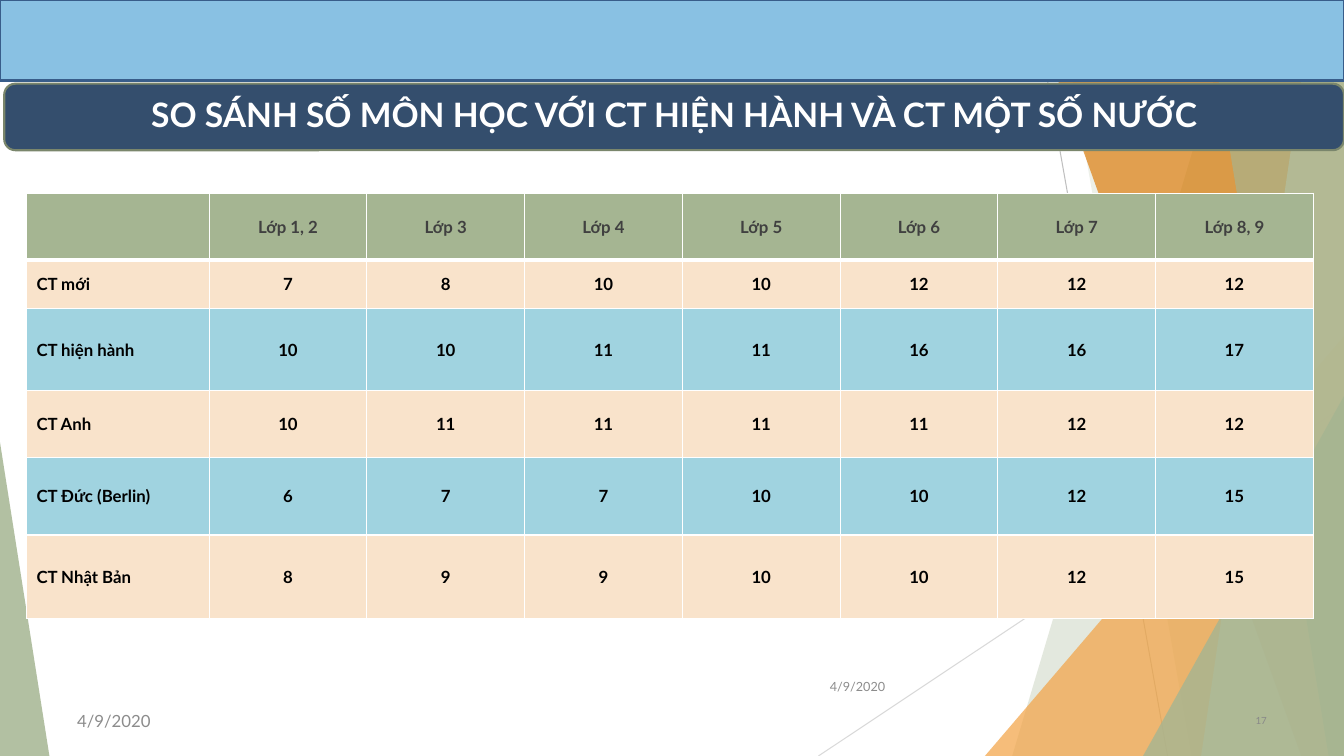
from dataclasses import dataclass
from typing import Any, Optional

import lxml.etree
import pptx
import pptx.dml.color
import pptx.enum.shapes
import pptx.enum.text
import pptx.oxml.ns
import pptx.slide
import pptx.util

Pt = pptx.util.Pt
Kind = pptx.enum.shapes.MSO_SHAPE
Align = pptx.enum.text.PP_ALIGN
Anchor = pptx.enum.text.MSO_ANCHOR
qn = pptx.oxml.ns.qn

WIDE, HIGH = 960, 540
WHITE, GREEN, PEACH, BLUE = "FFFFFF", "A5B592", "F9E3CB", "A0D3E0"
FONT = "Lato"


@dataclass
class Ray:
    start: tuple[float, float]
    end: tuple[float, float]
    color: str


@dataclass
class Band:
    top: float
    base: float
    color: str
    alpha: int


@dataclass
class Wedge:
    left: float
    top: float
    width: float
    peak: float
    color: str
    alpha: int


@dataclass
class Bar:
    kind: Any
    box: tuple[float, float, float, float]
    color: str
    edge: str
    weight: float
    text: str = ""


@dataclass
class Label:
    text: str
    box: tuple[float, float, float, float]
    size: float
    color: str
    align: Any


RAYS = [
    Ray((738, 0), (834, HIGH), "BFBFBF"),
    Ray((WIDE, 290), (584.6, HIGH), "D9D9D9"),
]
DECOR = [
    Band(884, 723, GREEN, 30),
    Band(756, 851, GREEN, 20),
    Wedge(703.5, 240, 256.5, 1, "F3A447", 72),
    Band(735, 929.5, "DD7E0E", 70),
    Band(938, 858, "C9D3BE", 70),
    Band(861, 949, GREEN, 65),
    Wedge(816.5, 283, 143.5, 1, GREEN, 80),
    Wedge(0, 316, 35.3, 0, GREEN, 85),
]
BARS = [
    Bar(Kind.RECTANGLE, (0, 0, WIDE, 57.3), "89C1E3", "385D8A", 2),
    Bar(Kind.ROUNDED_RECTANGLE, (3, 59.8, 957, 47.5), "344E6D", "7A866C", 1.5,
        "SO SÁNH SỐ MÔN HỌC VỚI CT HIỆN HÀNH VÀ CT MỘT SỐ NƯỚC"),
]
LABELS = [
    Label("4/9/2020", (567.3, 476, 72, 28.8), 9, "8C8C8C", Align.RIGHT),
    Label("4/9/2020", (48, 500.5, 224, 28.8), 12, "8C8C8C", Align.LEFT),
    Label("17", (688, 500.5, 224, 28.8), 7, "898989", Align.RIGHT),
]
ROWS = [
    ["", "Lớp 1, 2", "Lớp 3", "Lớp 4", "Lớp 5", "Lớp 6", "Lớp 7", "Lớp 8, 9"],
    ["CT mới", 7, 8, 10, 10, 12, 12, 12],
    ["CT hiện hành", 10, 10, 11, 11, 16, 16, 17],
    ["CT Anh", 10, 11, 11, 11, 11, 12, 12],
    ["CT Đức (Berlin)", 6, 7, 7, 10, 10, 12, 15],
    ["CT Nhật Bản", 8, 9, 9, 10, 10, 12, 15],
]
TALL = [47.5, 34.5, 59, 47.8, 55.2, 59.8]
FIRST, OTHER = 130.5, 112.7


def tint(code: str) -> pptx.dml.color.RGBColor:
    return pptx.dml.color.RGBColor.from_string(code)


def paint(shape: Any, color: str, alpha: int = 100) -> None:
    shape.shadow.inherit = False
    shape.fill.solid()
    shape.fill.fore_color.rgb = tint(color)
    shape.line.fill.background()
    if alpha < 100:
        mark = shape.element.spPr.find(f"{qn('a:solidFill')}/{qn('a:srgbClr')}")
        lxml.etree.SubElement(mark, qn("a:alpha"), val=str(alpha * 1000))


def write(frame: Any, text: str, size: float, color: str, align: Any,
          bold: bool = False) -> None:
    frame.text = text
    line = frame.paragraphs[0]
    line.alignment = align
    for run in line.runs:
        run.font.name = FONT
        run.font.size = Pt(size)
        run.font.bold = bold
        run.font.color.rgb = tint(color)


def draw_ray(slide: pptx.slide.Slide, ray: Ray) -> None:
    ends = [Pt(n) for n in ray.start + ray.end]
    line = slide.shapes.add_connector(pptx.enum.shapes.MSO_CONNECTOR.STRAIGHT, *ends)
    line.line.color.rgb = tint(ray.color)
    line.line.width = Pt(0.75)
    lxml.etree.SubElement(line.element.spPr, qn("a:effectLst"))


def draw_band(slide: pptx.slide.Slide, band: Band) -> None:
    pen = slide.shapes.build_freeform(Pt(band.top), 0)
    dots = [(WIDE, 0), (WIDE, HIGH), (band.base, HIGH)]
    pen.add_line_segments([(Pt(x), Pt(y)) for x, y in dots], close=True)
    paint(pen.convert_to_shape(), band.color, band.alpha)


def draw_wedge(slide: pptx.slide.Slide, wedge: Wedge) -> None:
    shape = slide.shapes.add_shape(
        Kind.ISOSCELES_TRIANGLE, Pt(wedge.left), Pt(wedge.top),
        Pt(wedge.width), Pt(HIGH - wedge.top))
    shape.adjustments[0] = wedge.peak
    paint(shape, wedge.color, wedge.alpha)


def draw_bar(slide: pptx.slide.Slide, bar: Bar) -> None:
    shape = slide.shapes.add_shape(bar.kind, *[Pt(n) for n in bar.box])
    paint(shape, bar.color)
    shape.line.color.rgb = tint(bar.edge)
    shape.line.width = Pt(bar.weight)
    if bar.text:
        frame = shape.text_frame
        frame.vertical_anchor = Anchor.MIDDLE
        write(frame, bar.text, 24, WHITE, Align.CENTER, True)
        frame.paragraphs[0].line_spacing = 0.9


def draw_label(slide: pptx.slide.Slide, label: Label) -> None:
    frame = slide.shapes.add_textbox(*[Pt(n) for n in label.box]).text_frame
    frame.word_wrap = True
    frame.vertical_anchor = Anchor.MIDDLE
    write(frame, label.text, label.size, label.color, label.align)


def edge_cell(cell: Any, row: int) -> None:
    props = cell._tc.get_or_add_tcPr()
    widths = {"L": 1, "R": 1, "T": 3 if row == 1 else 1, "B": 3 if row == 0 else 1}
    for side, width in widths.items():
        line = lxml.etree.SubElement(props, qn(f"a:ln{side}"), w=str(Pt(width)))
        fill = lxml.etree.SubElement(line, qn("a:solidFill"))
        lxml.etree.SubElement(fill, qn("a:srgbClr"), val=WHITE)


def draw_table(slide: pptx.slide.Slide) -> None:
    count = len(ROWS[0])
    wide = [FIRST] + [OTHER] * (count - 1)
    table = slide.shapes.add_table(
        len(ROWS), count, Pt(18.9), Pt(138.2), Pt(sum(wide)), Pt(sum(TALL))).table
    for col, width in zip(table.columns, wide):
        col.width = Pt(width)
    for r, (items, height) in enumerate(zip(ROWS, TALL)):
        table.rows[r].height = Pt(height)
        back = GREEN if r == 0 else PEACH if r % 2 else BLUE
        for c, item in enumerate(items):
            cell = table.cell(r, c)
            edge_cell(cell, r)
            cell.fill.solid()
            cell.fill.fore_color.rgb = tint(back)
            cell.vertical_anchor = Anchor.MIDDLE
            write(cell.text_frame, str(item), 12, "000000" if r else "404040",
                  Align.CENTER if c else Align.LEFT, True)


def main() -> None:
    deck = pptx.Presentation()
    deck.slide_width, deck.slide_height = Pt(WIDE), Pt(HIGH)
    slide = deck.slides.add_slide(deck.slide_layouts[6])
    for ray in RAYS:
        draw_ray(slide, ray)
    for part in DECOR:
        if isinstance(part, Band):
            draw_band(slide, part)
        else:
            draw_wedge(slide, part)
    for bar in BARS:
        draw_bar(slide, bar)
    for label in LABELS:
        draw_label(slide, label)
    draw_table(slide)
    deck.save("out.pptx")


if __name__ == "__main__":
    main()
